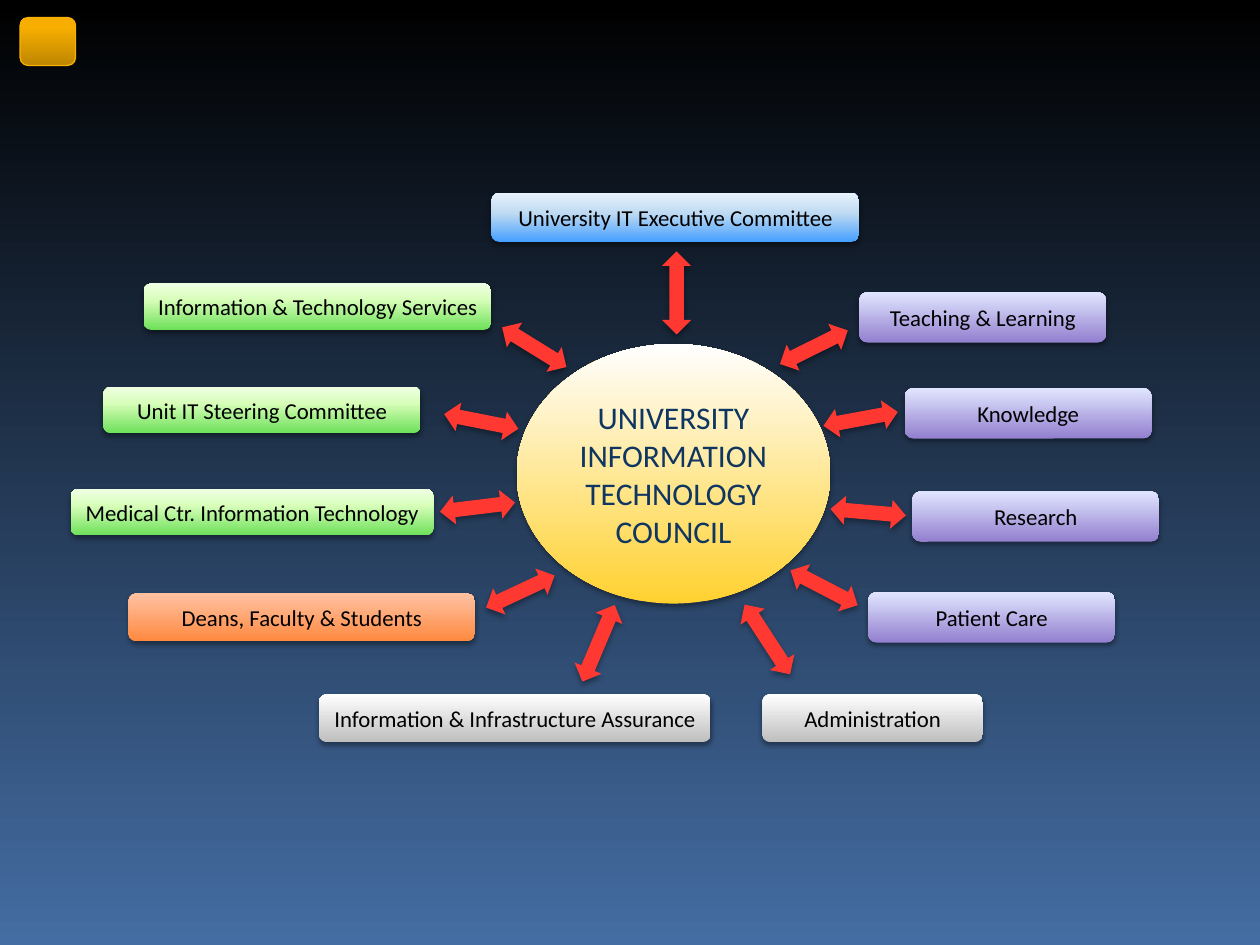
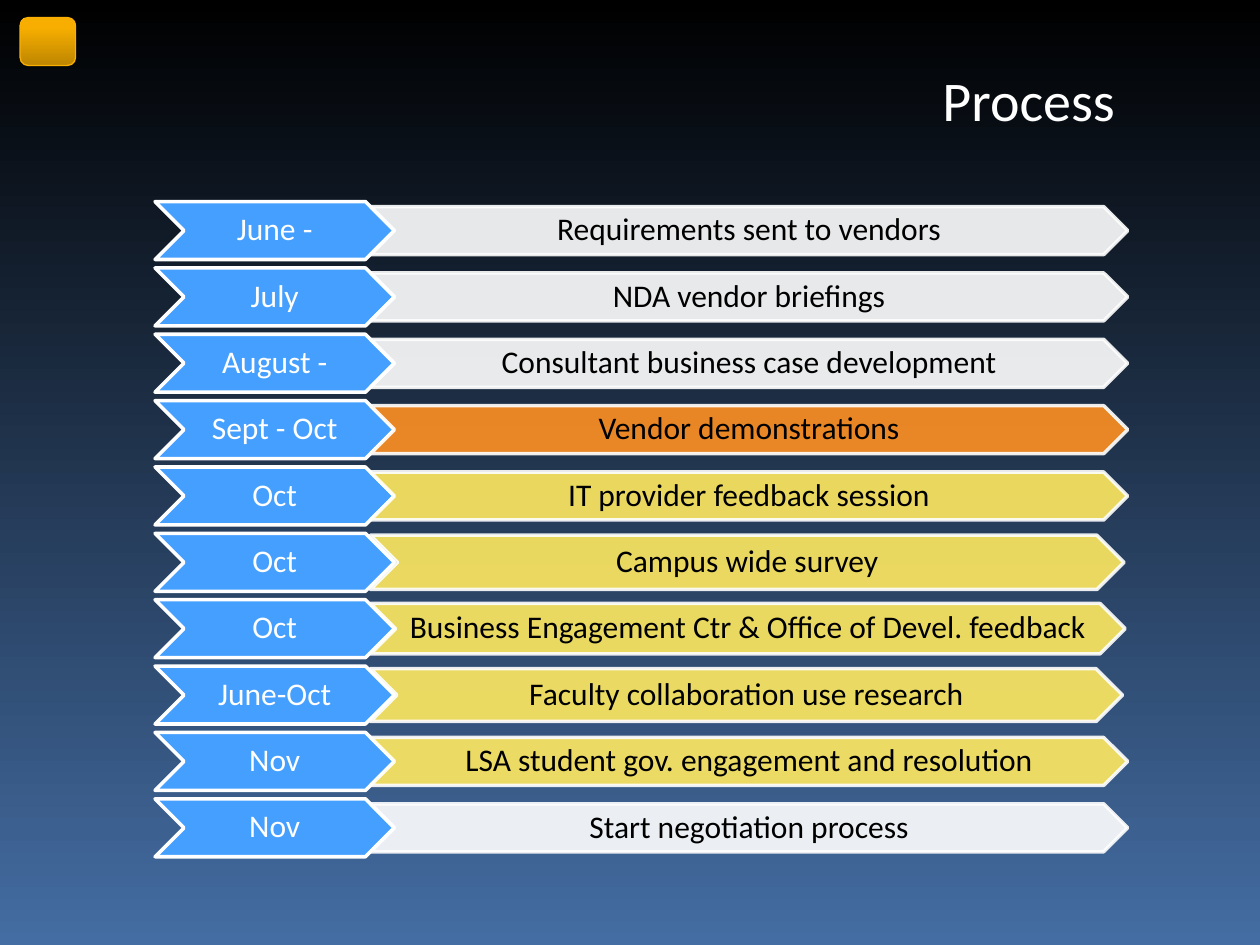
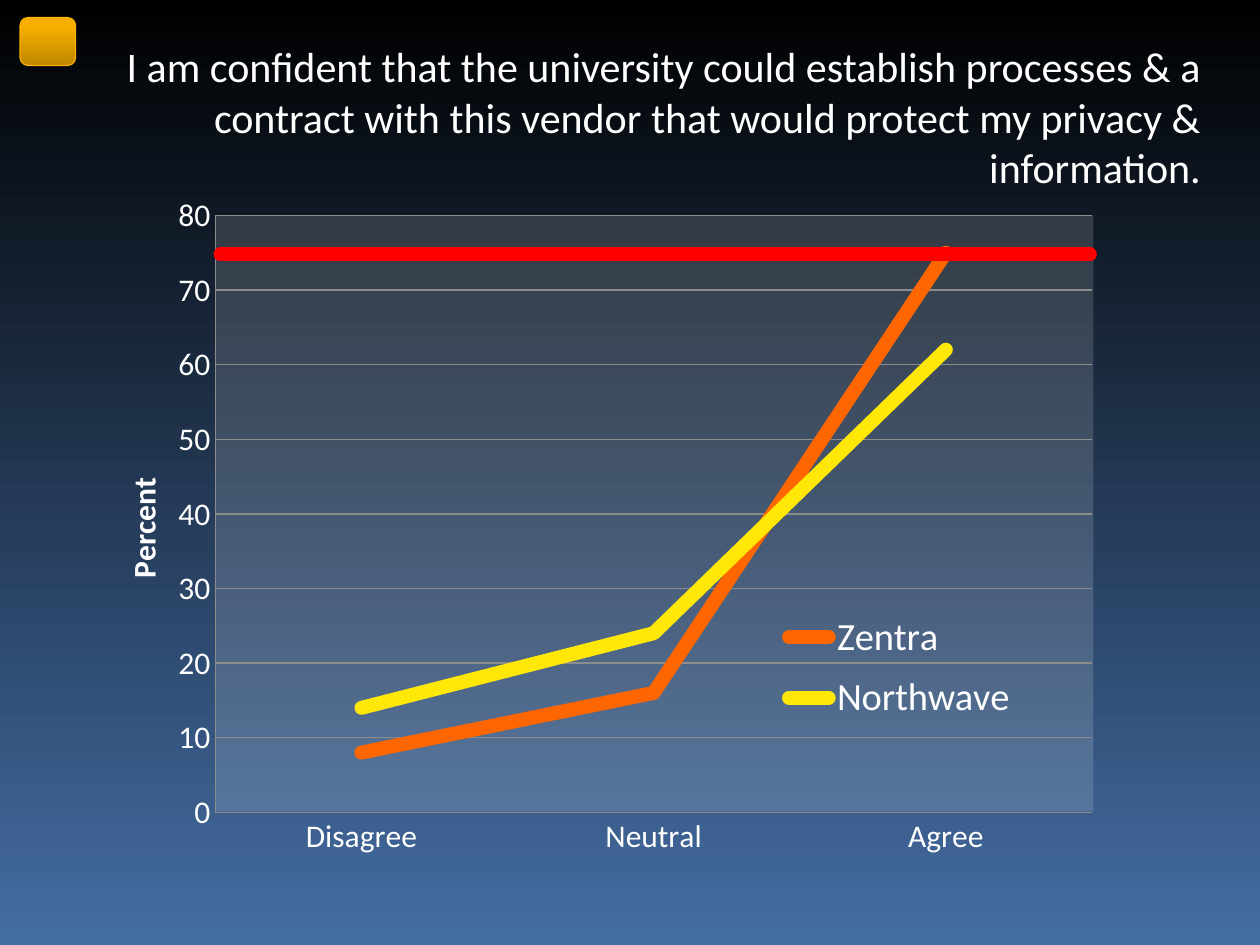
import copy

import pptx
import pptx.chart.data
import pptx.dml.color
import pptx.enum.chart
import pptx.enum.shapes
import pptx.enum.text
import pptx.oxml
import pptx.oxml.ns
import pptx.util
from lxml import etree

Pt = pptx.util.Pt
RGBColor = pptx.dml.color.RGBColor
qn = pptx.oxml.ns.qn
PRESET = pptx.enum.shapes.MSO_SHAPE
ALIGN = pptx.enum.text.PP_ALIGN
MIDDLE = pptx.enum.text.MSO_ANCHOR.MIDDLE

FONT = "Calibri"
WHITE = RGBColor(0xFF, 0xFF, 0xFF)
BLACK = RGBColor(0, 0, 0)
NAVY = RGBColor(0x0F, 0x36, 0x61)
SKY = RGBColor(0x45, 0x9F, 0xFF)
ARROW_RED = RGBColor(0xFF, 0x39, 0x31)
TARGET_RED = RGBColor(0xFF, 0, 0)
BADGE_EDGE = RGBColor(0xF9, 0xB0, 0)
ORANGE = RGBColor(0xFF, 0x90, 0x22)
YELLOW = RGBColor(0xFF, 0xE9, 0x60)
GRID_GRAY = RGBColor(0x8C, 0x8C, 0x8C)
SERIES_ORANGE = RGBColor(0xFF, 0x66, 0)
SERIES_YELLOW = RGBColor(0xFF, 0xE7, 0x08)

BACKDROP = [(0, RGBColor(0x44, 0x6D, 0xA3)), (1, BLACK)]
BADGE = [(0, RGBColor(0xBE, 0x86, 0)), (0.8, RGBColor(0xF7, 0xAE, 0)),
         (1, RGBColor(0xF8, 0xAF, 0))]
GOLD = [(0, RGBColor(0xFF, 0xD1, 0x30)), (1, WHITE)]
BLUE = [(0, SKY), (0.6, RGBColor(0xC1, 0xDC, 0xF2)), (1, RGBColor(0xE7, 0xF2, 0xFB))]
SILVER = [(0.01, RGBColor(0xBF, 0xBF, 0xBF)), (1, WHITE)]
CORAL = [(0, RGBColor(0xFF, 0x89, 0x3F)), (1, RGBColor(0xFF, 0xC2, 0xA3))]
GREEN = [(0, RGBColor(0x6D, 0xE0, 0x58)), (0.65, RGBColor(0xD8, 0xFE, 0xBA)),
         (1, RGBColor(0xF0, 0xFF, 0xE4))]
PURPLE = [(0, RGBColor(0x92, 0x7F, 0xCF)), (1, RGBColor(0xE1, 0xE6, 0xFF))]

GROUPS = [
    ("University IT Executive Committee", BLUE, (280.8, 110.2, 210.2, 28.1)),
    ("Administration", SILVER, (435.6, 396.7, 126, 27.4)),
    ("Information & Infrastructure Assurance", SILVER, (182.2, 396.7, 223.9, 27.4)),
    ("Deans, Faculty & Students", CORAL, (73.4, 339.1, 198, 27.4)),
    ("Information & Technology Services", GREEN, (82.1, 162, 198.7, 26.6)),
    ("Unit IT Steering Committee", GREEN, (59, 221, 181.4, 26.6)),
    ("Medical Ctr. Information Technology", GREEN, (40.3, 279.4, 207.4, 26.6)),
    ("Patient Care", PURPLE, (496.1, 338.4, 141.1, 28.8)),
    ("Teaching & Learning", PURPLE, (491, 167, 141.1, 28.8)),
    ("Knowledge", PURPLE, (517, 221.8, 141.1, 28.8)),
    ("Research", PURPLE, (521.3, 280.8, 141.1, 28.8)),
]

SPOKE_HEIGHT = 16.6
SHORT, LONG = 43.2, 47.5
SPOKES = [
    (305.3, 198.4, SHORT, 31.7), (275, 240.8, SHORT, 11.2),
    (272.9, 289.8, SHORT, 353), (491.8, 239.4, SHORT, 349.5),
    (465.1, 198.4, SHORT, 333.6), (386.6, 167.4, LONG, 90),
    (496.1, 292.7, SHORT, 5), (297.4, 338, SHORT, 334.9),
    (470.9, 335.9, SHORT, 27.5), (438.5, 365.4, LONG, 56.9),
    (342, 367.6, LONG, 112.9),
]

BAR_SIZE = (432.7, 27.4)
STEPS = [
    ("June -", "Requirements sent to vendors", WHITE, BAR_SIZE),
    ("July", "NDA vendor briefings", WHITE, BAR_SIZE),
    ("August -", "Consultant business case development", WHITE, BAR_SIZE),
    ("Sept - Oct", "Vendor demonstrations", ORANGE, BAR_SIZE),
    ("Oct", "IT provider feedback session", YELLOW, BAR_SIZE),
    ("Oct", "Campus wide survey", YELLOW, (430.6, 31)),
    ("Oct", "Business Engagement Ctr & Office of Devel. feedback", YELLOW, (431.3, 28.8)),
    ("June-Oct", "Faculty collaboration use research", YELLOW, (429.8, 30.2)),
    ("Nov", "LSA student gov. engagement and resolution", YELLOW, BAR_SIZE),
    ("Nov", "Start negotiation process", WHITE, BAR_SIZE),
]
MONTH_LEFT, MONTH_TOP, MONTH_WIDTH, MONTH_HEIGHT = 88.6, 115.2, 136.8, 33.1
STEP_PITCH = 37.92
BAR_LEFT = 211.7

ANSWERS = ["Disagree", "Neutral", "Agree"]
VENDORS = [("Zentra", (8, 16, 75), SERIES_ORANGE),
           ("Northwave", (14, 24, 62), SERIES_YELLOW)]


def assign(target, formats):
    for attribute, value in formats.items():
        setattr(target, attribute, value)


def place(box):
    return dict(zip(("left", "top", "width", "height"), map(Pt, box)))


def set_font(font, size, color, bold=False):
    assign(font, {"name": FONT, "size": Pt(size), "bold": bold})
    font.color.rgb = color


def set_text(frame, text, size, color, align=ALIGN.CENTER, spacing=None):
    frame.text = text
    assign(frame, {"word_wrap": True, "vertical_anchor": MIDDLE,
                   "auto_size": pptx.enum.text.MSO_AUTO_SIZE.NONE})
    for paragraph in frame.paragraphs:
        assign(paragraph, {"alignment": align, "line_spacing": spacing})
        set_font(paragraph.font, size, color)


def clear_margins(frame):
    assign(frame, {f"margin_{side}": 0 for side in ("left", "top", "right", "bottom")})


def paint_gradient(element, fill, stops):
    fill.gradient()
    fill.gradient_angle = 90
    stop_list = next(element.iter(qn("a:gsLst")))
    while len(stop_list) < len(stops):
        stop_list.append(copy.deepcopy(stop_list[0]))
    for stop, (position, color) in zip(fill.gradient_stops, stops):
        stop.position = position
        stop.color.rgb = color


def set_opacity(shape, percent):
    for color in shape.element.spPr.iter(qn("a:srgbClr")):
        etree.SubElement(color, qn("a:alpha"), val=str(percent * 1000))


def cast_shadow(shape, opacity, distance):
    effects = shape.element.spPr.find(qn("a:effectLst"))
    shadow = etree.SubElement(
        effects, qn("a:outerShdw"), blurRad=str(Pt(3.1)), dist=str(Pt(distance)),
        dir="5400000", rotWithShape="0")
    color = etree.SubElement(shadow, qn("a:srgbClr"), val="000000")
    etree.SubElement(color, qn("a:alpha"), val=str(opacity * 1000))


def add_block(slide, preset, box, fill, edge=None, edge_width=2):
    block = slide.shapes.add_shape(preset, *map(Pt, box))
    block.shadow.inherit = False
    if isinstance(fill, list):
        paint_gradient(block.element, block.fill, fill)
    else:
        block.fill.solid()
        block.fill.fore_color.rgb = fill
    if edge is None:
        block.line.fill.background()
    else:
        block.line.color.rgb = edge
        block.line.width = Pt(edge_width)
    clear_margins(block.text_frame)
    return block


def add_spoke(slide, center_x, center_y, length, angle):
    box = (center_x - length / 2, center_y - SPOKE_HEIGHT / 2, length, SPOKE_HEIGHT)
    spoke = add_block(slide, PRESET.LEFT_RIGHT_ARROW, box, ARROW_RED)
    spoke.rotation = angle
    cast_shadow(spoke, 35, 1.8)


def add_group(slide, text, fill, box, preset=PRESET.ROUNDED_RECTANGLE, size=13, color=BLACK):
    group = add_block(slide, preset, box, fill)
    cast_shadow(group, 38, 1.6)
    set_text(group.text_frame, text, size, color)


def add_step(slide, row, month, task, color, size):
    top = MONTH_TOP + row * STEP_PITCH
    month_tag = add_block(slide, PRESET.CHEVRON,
                          (MONTH_LEFT, top, MONTH_WIDTH, MONTH_HEIGHT), SKY, WHITE)
    set_text(month_tag.text_frame, month, 18, WHITE, spacing=0.9)
    width, height = size
    task_bar = add_block(slide, PRESET.CHEVRON,
                         (BAR_LEFT, top + (MONTH_HEIGHT - height) / 2, width, height),
                         color, WHITE)
    set_opacity(task_bar, 90)
    set_text(task_bar.text_frame, task, 18, BLACK, spacing=0.9)


def set_title(slide, text, size, box):
    title = slide.shapes.title
    assign(title, place(box))
    set_text(title.text_frame, text, size, WHITE, ALIGN.RIGHT)


def set_chart_layout(parent, index, fractions, inner=False):
    for previous in parent.findall(qn("c:layout")):
        parent.remove(previous)
    layout = etree.Element(qn("c:layout"))
    manual = etree.SubElement(layout, qn("c:manualLayout"))
    if inner:
        etree.SubElement(manual, qn("c:layoutTarget"), val="inner")
    for key in ("x", "y"):
        etree.SubElement(manual, qn(f"c:{key}Mode"), val="edge")
    for key, fraction in zip("xywh", fractions):
        etree.SubElement(manual, qn(f"c:{key}"), val=str(fraction))
    parent.insert(index, layout)


def round_caps(element):
    for line in element.iter(qn("a:ln")):
        line.set("cap", "rnd")


def format_axis(axis):
    none = pptx.enum.chart.XL_TICK_MARK.NONE
    assign(axis, {"major_tick_mark": none, "minor_tick_mark": none})
    set_font(axis.tick_labels.font, 18, WHITE)
    axis.format.line.color.rgb = GRID_GRAY


def add_confidence_chart(slide):
    data = pptx.chart.data.CategoryChartData()
    data.categories = ANSWERS
    for vendor, percents, _ in VENDORS:
        data.add_series(vendor, percents)
    chart = slide.shapes.add_chart(
        pptx.enum.chart.XL_CHART_TYPE.LINE, *map(Pt, (9.4, 107.3, 710.6, 406.1)), data).chart
    chart.has_title = False
    set_font(chart.font, 18, WHITE)
    chart.plots[0].vary_by_categories = False

    for series, (_, _, color) in zip(chart.plots[0].series, VENDORS):
        series.smooth = False
        series.format.line.color.rgb = color
        series.format.line.width = Pt(8)
        round_caps(series.format.line._get_or_add_ln().getparent())

    format_axis(chart.category_axis)
    percent_axis = chart.value_axis
    format_axis(percent_axis)
    assign(percent_axis, {"minimum_scale": 0, "maximum_scale": 80, "major_unit": 10,
                          "has_major_gridlines": True})
    percent_axis.major_gridlines.format.line.color.rgb = GRID_GRAY
    percent_title = percent_axis.axis_title.text_frame
    percent_title.text = "Percent"
    set_font(percent_title.paragraphs[0].runs[0].font, 18, WHITE, bold=True)

    chart.has_legend = True
    assign(chart.legend, {"position": pptx.enum.chart.XL_LEGEND_POSITION.RIGHT,
                          "include_in_layout": True})
    set_font(chart.legend.font, 22, WHITE)

    root = chart.element
    title_element = root.xpath(".//c:valAx/c:title")[0]
    assign_rotation = next(title_element.iter(qn("a:bodyPr")))
    assign_rotation.set("rot", "-5400000")
    assign_rotation.set("vert", "horz")
    set_chart_layout(title_element, 1, (0.08, 0.4))
    set_chart_layout(root.xpath(".//c:plotArea")[0], 0, (0.16, 0.039, 0.705, 0.84), inner=True)
    set_chart_layout(root.xpath(".//c:legend")[0], 1, (0.6, 0.58, 0.22, 0.19))


def add_target_line(slide):
    target = slide.shapes.add_connector(
        pptx.enum.shapes.MSO_CONNECTOR.STRAIGHT, *map(Pt, (126, 145.4, 622.8, 145.4)))
    target.line.color.rgb = TARGET_RED
    target.line.width = Pt(8)
    round_caps(target.element)
    etree.SubElement(target.element.spPr, qn("a:effectLst"))


def dress_master(master, slide):
    paint_gradient(master.element, master.background.fill, BACKDROP)
    badge = add_block(slide, PRESET.ROUNDED_RECTANGLE, (11.5, 10, 31.7, 27.4),
                      BADGE, BADGE_EDGE, 0.75)
    badge.element.nvSpPr.cNvPr.set("id", "20")
    master.shapes.element.append(badge.element)


def build_council(slide):
    for spoke in SPOKES:
        add_spoke(slide, *spoke)
    add_group(slide, "UNIVERSITY\nINFORMATION\nTECHNOLOGY\nCOUNCIL", GOLD,
              (295.2, 196.6, 179.3, 148.3), PRESET.OVAL, 18, NAVY)
    for group in GROUPS:
        add_group(slide, *group)


def build_process(slide):
    set_title(slide, "Process", 32, (192.2, 41, 452.2, 31.7))
    for row, step in enumerate(STEPS):
        add_step(slide, row, *step)


def build_confidence(slide):
    set_title(slide, "I am confident that the university could establish processes & a "
              "contract with this vendor that would protect my privacy & information.",
              24, (0, 21.6, 693.4, 90))
    panel = add_block(slide, PRESET.RECTANGLE, (123.1, 123.1, 501.8, 340.6), WHITE)
    set_opacity(panel, 15)
    add_confidence_chart(slide)
    add_target_line(slide)


def main():
    deck = pptx.Presentation()
    assign(deck, {"slide_width": Pt(720), "slide_height": Pt(540)})
    title_only, blank = deck.slide_layouts[5], deck.slide_layouts[6]
    council = deck.slides.add_slide(blank)
    dress_master(deck.slide_master, council)
    build_council(council)
    build_process(deck.slides.add_slide(title_only))
    build_confidence(deck.slides.add_slide(title_only))
    deck.save("out.pptx")


if __name__ == "__main__":
    main()
